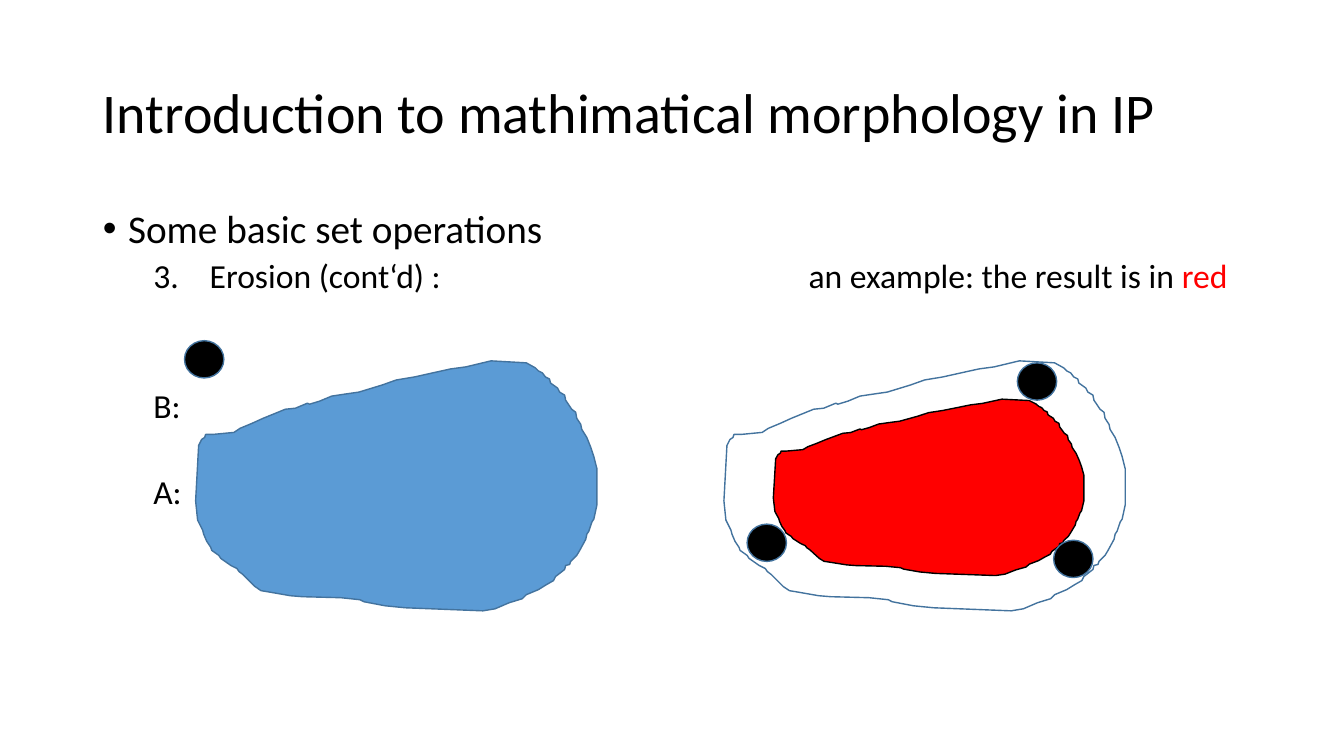
from lxml.etree import SubElement
from pptx import Presentation
from pptx.dml.color import RGBColor
from pptx.enum.shapes import MSO_SHAPE
from pptx.enum.text import MSO_ANCHOR, MSO_AUTO_SIZE, PP_ALIGN
from pptx.oxml.ns import qn
from pptx.util import Emu, Pt

# Scale and page, in px
PX = 9144  # 100 px to the inch
SLIDE_WIDTH, SLIDE_HEIGHT = 1333, 750
TEXT_LEFT, TEXT_WIDTH = 92, 1150
TAB_STEP = 100

# Type, in points
FONT = "Calibri"
TITLE_SIZE, HEADING_SIZE, ITEM_SIZE = 40, 28, 24
ITEM_GAP = 5
SKIPPED_LINE = 31  # one item line with its gap

# Colours
BLACK = RGBColor(0x00, 0x00, 0x00)
RED = RGBColor(0xFF, 0x00, 0x00)
BLUE = RGBColor(0x5B, 0x9B, 0xD5)
EDGE_BLUE = RGBColor(0x43, 0x73, 0x9E)

# Boxes of the regions: left, top, width, height
SET_A_BOX = (194, 358, 398, 248)
SET_A_AGAIN_BOX = (718, 358, 398, 248)
EROSION_BOX = (767, 396, 308, 175)

# Structuring element B: its size, its own place, and where it touches the edge of A
DISC_WIDTH, DISC_HEIGHT = 39, 37
DISC_B = (183, 338)
DISCS_TOUCHING_EDGE = [(1009, 360), (741, 520), (1045, 536)]

# Outline of set A, clockwise, measured from the corner of its box
TOP_EDGE = [
    (17, 73), (38, 71), (44, 67), (56, 62), (67, 57), (89, 48), (99, 47),
    (111, 42), (113, 43), (123, 40), (135, 35), (148, 33), (162, 31),
    (185, 24), (199, 19), (217, 16), (235, 12), (253, 8), (268, 6), (293, 0),
]
RIGHT_EDGE = [
    (328, 2), (337, 7), (340, 10), (344, 12), (347, 16), (351, 18), (352, 22),
    (359, 27), (361, 31), (366, 34), (367, 39), (371, 45), (373, 48),
    (377, 51), (378, 57), (382, 63), (383, 68), (388, 76), (392, 86),
    (395, 95), (398, 107), (398, 143), (395, 157), (393, 160), (390, 169),
    (388, 172), (387, 177), (381, 188), (378, 193), (372, 199), (371, 202),
    (367, 203), (366, 207), (357, 214), (355, 218), (348, 222), (340, 227),
]
BOTTOM_EDGE = [
    (328, 232), (324, 236), (311, 240), (297, 246), (285, 248), (208, 245),
    (188, 243), (167, 239), (163, 237), (144, 235), (106, 234), (94, 233),
    (71, 229), (65, 228),
]
LEFT_EDGE = [
    (59, 224), (54, 219), (47, 212), (43, 209), (41, 206), (35, 203),
    (25, 196), (23, 193), (16, 188), (15, 185), (11, 179), (8, 172),
    (7, 168), (2, 158), (0, 139), (3, 84), (6, 78), (9, 76), (10, 73),
]
OUTLINE = TOP_EDGE + RIGHT_EDGE + BOTTOM_EDGE + LEFT_EDGE


# Text
def prepare_placeholder(shape, top, height, anchor):
    """Place a template text box in the text column and return its frame."""
    shape.left, shape.top = Emu(TEXT_LEFT * PX), Emu(top * PX)
    shape.width, shape.height = Emu(TEXT_WIDTH * PX), Emu(height * PX)
    frame = shape.text_frame
    frame.word_wrap = True
    frame.auto_size = MSO_AUTO_SIZE.NONE
    frame.vertical_anchor = anchor
    return frame


def format_paragraph(paragraph, space_before=0):
    paragraph.alignment = PP_ALIGN.LEFT
    paragraph.line_spacing = 0.9
    paragraph.space_before = Pt(space_before)


def set_marker(paragraph, margin, hanging, tag, **attributes):
    """Set the indents, the tab step and the bullet, number or absence of one."""
    properties = paragraph._p.get_or_add_pPr()
    properties.set("marL", str(margin * PX))
    properties.set("indent", str(-hanging * PX))
    properties.set("defTabSz", str(TAB_STEP * PX))
    SubElement(properties, qn(tag), **attributes)


def add_run(paragraph, text, size, color=BLACK):
    run = paragraph.add_run()
    run.text = text
    run.font.name = FONT
    run.font.size = Pt(size)
    run.font.color.rgb = color


def add_item(frame, skipped_lines=0):
    paragraph = frame.add_paragraph()
    paragraph.level = 1
    format_paragraph(paragraph, ITEM_GAP + skipped_lines * SKIPPED_LINE)
    return paragraph


def write_title(title):
    frame = prepare_placeholder(title, 42, 145, MSO_ANCHOR.MIDDLE)
    paragraph = frame.paragraphs[0]
    format_paragraph(paragraph)
    add_run(paragraph, "Introduction to mathimatical morphology in IP", TITLE_SIZE)


def write_list(body):
    frame = prepare_placeholder(body, 203, 472, MSO_ANCHOR.TOP)

    heading = frame.paragraphs[0]
    format_paragraph(heading)
    set_marker(heading, 25, 25, "a:buChar", char="•")
    add_run(heading, "Some basic set operations", HEADING_SIZE)

    erosion = add_item(frame)
    set_marker(erosion, 106, 56, "a:buAutoNum", type="arabicPeriod", startAt="3")
    add_run(erosion, "Erosion (cont‘d) : \t\t\t\tan example: the result is in ", ITEM_SIZE)
    add_run(erosion, "red", ITEM_SIZE, RED)

    for label, skipped_lines in (("B:", 2), ("A:", 1)):
        item = add_item(frame, skipped_lines)
        set_marker(item, 50, 0, "a:buNone")
        add_run(item, label, ITEM_SIZE)


# Drawing
def style_shape(shape, fill, edge):
    shape.shadow.inherit = False
    if fill is None:
        shape.fill.background()
    else:
        shape.fill.solid()
        shape.fill.fore_color.rgb = fill
    shape.line.color.rgb = edge
    shape.line.width = Pt(1)


def add_region(slide, box, fill, edge):
    """Draw the outline of set A, stretched to fill the box."""
    left, top, width, height = box
    stretch_x = width / SET_A_BOX[2]
    stretch_y = height / SET_A_BOX[3]
    points = [
        (round((left + x * stretch_x) * PX), round((top + y * stretch_y) * PX))
        for x, y in OUTLINE
    ]
    start_x, start_y = points[0]
    builder = slide.shapes.build_freeform(start_x, start_y)
    builder.add_line_segments(points[1:], close=True)
    style_shape(builder.convert_to_shape(), fill, edge)


def add_disc(slide, left, top):
    box = [Emu(length * PX) for length in (left, top, DISC_WIDTH, DISC_HEIGHT)]
    disc = slide.shapes.add_shape(MSO_SHAPE.OVAL, *box)
    style_shape(disc, BLACK, EDGE_BLUE)


def main():
    presentation = Presentation()
    presentation.slide_width = Emu(SLIDE_WIDTH * PX)
    presentation.slide_height = Emu(SLIDE_HEIGHT * PX)
    slide = presentation.slides.add_slide(presentation.slide_layouts[1])

    # Title and list
    write_title(slide.shapes.title)
    write_list(slide.placeholders[1])

    # Regions: set A, its empty outline, and the erosion inside it
    for box, fill, edge in (
        (SET_A_BOX, BLUE, EDGE_BLUE),
        (SET_A_AGAIN_BOX, None, EDGE_BLUE),
        (EROSION_BOX, RED, BLACK),
    ):
        add_region(slide, box, fill, edge)

    # Structuring element B, alone and along the edge of A
    for left, top in [DISC_B] + DISCS_TOUCHING_EDGE:
        add_disc(slide, left, top)

    presentation.save("out.pptx")


if __name__ == "__main__":
    main()
